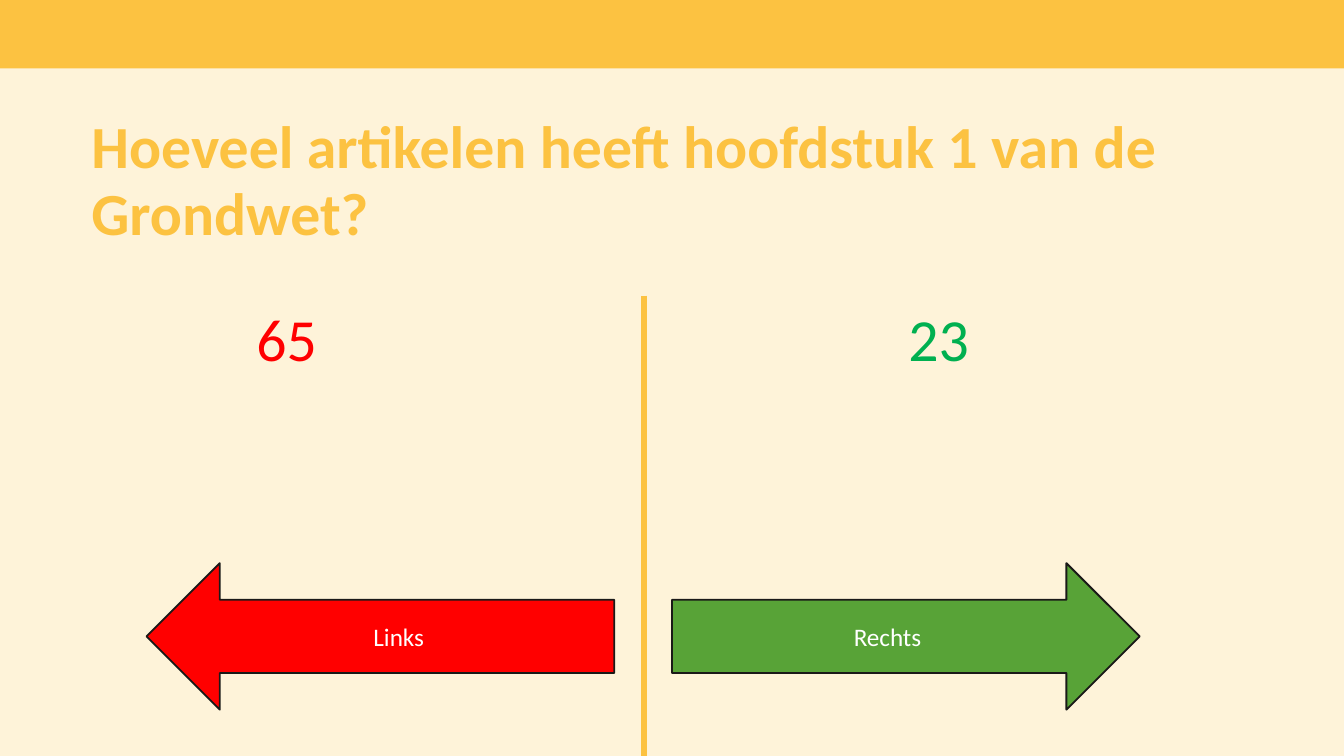
from lxml import etree
from pptx import Presentation
from pptx.dml.color import RGBColor
from pptx.enum.shapes import MSO_CONNECTOR, MSO_SHAPE
from pptx.enum.text import MSO_ANCHOR, PP_ALIGN
from pptx.oxml.ns import qn
from pptx.util import Inches, Pt

RECTANGLE = MSO_SHAPE.RECTANGLE
LEFT_ARROW = MSO_SHAPE.LEFT_ARROW
RIGHT_ARROW = MSO_SHAPE.RIGHT_ARROW
STRAIGHT = MSO_CONNECTOR.STRAIGHT
TOP = MSO_ANCHOR.TOP
MIDDLE = MSO_ANCHOR.MIDDLE
CENTER = PP_ALIGN.CENTER

WIDTH = 10
HEIGHT = WIDTH * 9 / 16
FONT = "Calibri"
COLORS = {
    "background": "FEF3D9",
    "accent": "FCC241",
    "wrong": "FF0000",
    "right": "00B050",
    "right_arrow": "58A337",
    "outline": "1A1918",
    "label": "FFFFFF",
}
ANSWER_TOP = 2.2
ARROW_TOP, ARROW_WIDTH, ARROW_HEIGHT = 4.19, 3.48, 1.09


def color(name):
    return RGBColor.from_string(COLORS[name])


def box(left, top, width, height):
    return [Inches(length) for length in (left, top, width, height)]


def add_run(paragraph, text, size, color_name, bold=False):
    run = paragraph.add_run()
    run.text = text
    run.font.name = FONT
    run.font.size = Pt(size)
    run.font.bold = bold
    run.font.color.rgb = color(color_name)


def add_text(slide, place, text, color_name, bold=False):
    frame = slide.shapes.add_textbox(*box(*place)).text_frame
    frame.word_wrap = True
    frame.vertical_anchor = TOP
    add_run(frame.paragraphs[0], text, 32, color_name, bold)
    return frame


def add_title(slide, text):
    frame = add_text(slide, (0.68, 0.79, WIDTH - 0.68, 0.98), text, "accent", True)
    frame.margin_left = frame.margin_right = frame.margin_bottom = 0
    frame.paragraphs[0].line_spacing = Pt(36)


def add_filled_shape(slide, kind, place, fill):
    shape = slide.shapes.add_shape(kind, *box(*place))
    shape.shadow.inherit = False
    shape.fill.solid()
    shape.fill.fore_color.rgb = color(fill)
    shape.line.fill.background()
    return shape


def add_arrow(slide, kind, left, fill, label):
    place = (left, ARROW_TOP, ARROW_WIDTH, ARROW_HEIGHT)
    arrow = add_filled_shape(slide, kind, place, fill)
    arrow.line.color.rgb = color("outline")
    arrow.line.width = Pt(1)
    arrow.text_frame.vertical_anchor = MIDDLE
    paragraph = arrow.text_frame.paragraphs[0]
    paragraph.alignment = CENTER
    add_run(paragraph, label, 13.5, "label")


def add_divider(slide, x, top, bottom):
    divider = slide.shapes.add_connector(STRAIGHT, *box(x, top, x, bottom))
    divider.line.color.rgb = color("accent")
    divider.line.width = Pt(3)
    etree.SubElement(divider._element.spPr, qn("a:effectLst"))


def main():
    presentation = Presentation()
    presentation.slide_width = Inches(WIDTH)
    presentation.slide_height = Inches(HEIGHT)
    slide = presentation.slides.add_slide(presentation.slide_layouts[6])
    slide.background.fill.solid()
    slide.background.fill.fore_color.rgb = color("background")

    add_filled_shape(slide, RECTANGLE, (0, 0, WIDTH, 0.51), "accent")
    add_title(slide, "Hoeveel artikelen heeft hoofdstuk 1 van de Grondwet?")
    add_divider(slide, 4.79, ANSWER_TOP, HEIGHT)
    add_text(slide, (1.81, ANSWER_TOP, 1.11, 0.64), "65", "wrong")
    add_text(slide, (6.66, ANSWER_TOP, 0.82, 0.64), "23", "right")
    add_arrow(slide, LEFT_ARROW, 1.09, "wrong", "Links")
    add_arrow(slide, RIGHT_ARROW, 5, "right_arrow", "Rechts")

    presentation.save("out.pptx")


if __name__ == "__main__":
    main()
